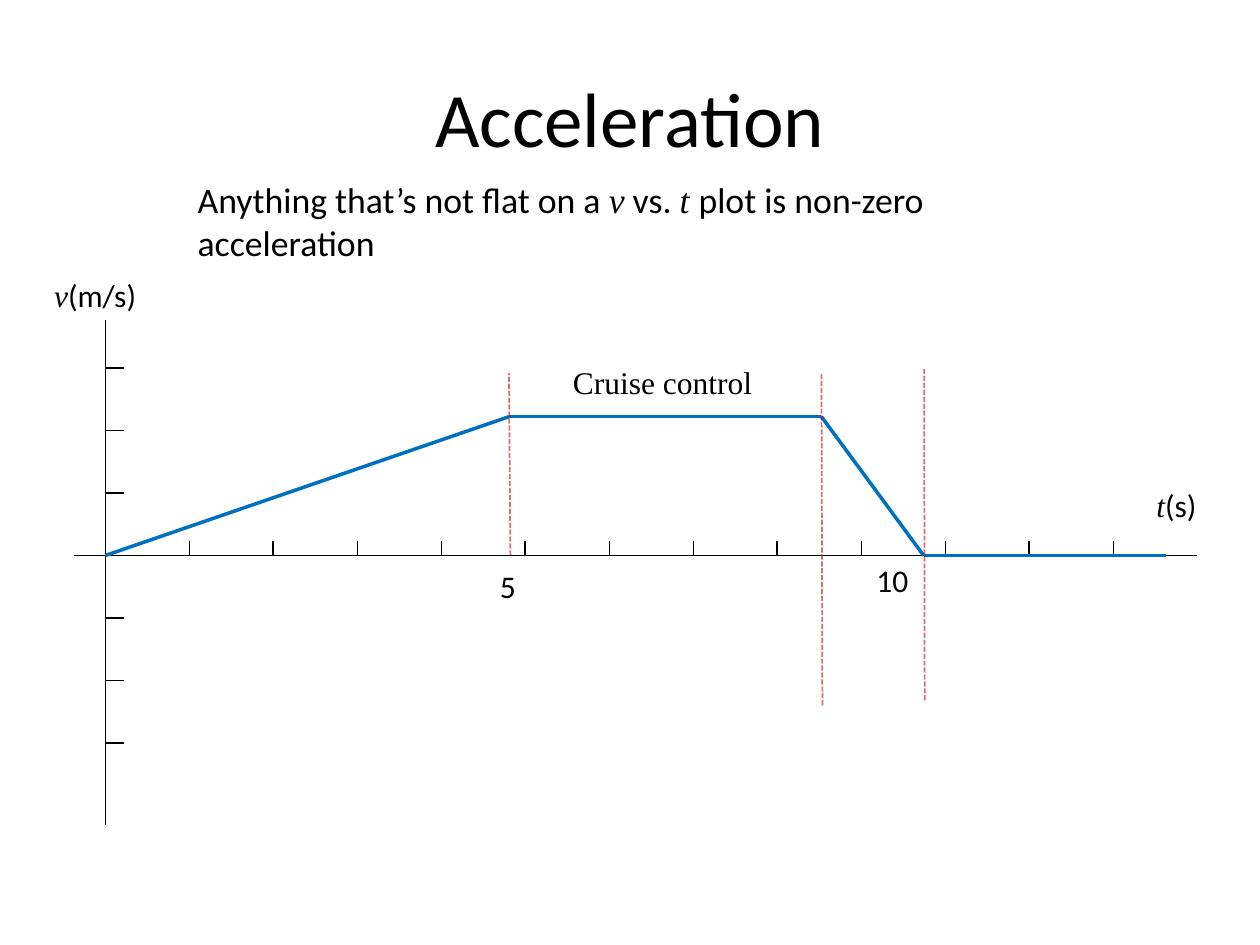
from lxml import etree
from pptx import Presentation
from pptx import util as u
from pptx.dml.color import RGBColor
from pptx.enum import dml, shapes, text
from pptx.oxml.ns import qn

BLACK = RGBColor(0x00, 0x00, 0x00)
BLUE = RGBColor(0x00, 0x70, 0xC0)
RED = RGBColor(0xC0, 0x00, 0x00)
SANS, SERIF = "Calibri", "Times New Roman"


def write(p, content, size=18, font=SANS, italic=False):
    r = p.add_run()
    r.text = content
    r.font.size = u.Pt(size)
    r.font.name = font
    r.font.italic = italic
    r.font.color.rgb = BLACK


def draw_line(x1, y1, x2, y2, color=BLACK, width=0.75):
    """Add a straight line between two points given in centimetres."""
    c = s.shapes.add_connector(
        shapes.MSO_CONNECTOR.STRAIGHT, u.Cm(x1), u.Cm(y1), u.Cm(x2), u.Cm(y2))
    c.line.color.rgb = color
    c.line.width = u.Pt(width)
    etree.SubElement(c._element.spPr, qn("a:effectLst"))
    return c


prs = Presentation()
prs.slide_width, prs.slide_height = u.Cm(25.4), u.Cm(19.05)
s = prs.slides.add_slide(prs.slide_layouts[1])

# Title and statement
title, body = s.placeholders
for sp, box in ((title, (1.27, 0.76, 22.86, 3.18)), (body, (3.73, 3.45, 18.72, 1.7))):
    sp.left, sp.top, sp.width, sp.height = map(u.Cm, box)
    sp.text_frame.auto_size = text.MSO_AUTO_SIZE.NONE

p = title.text_frame.paragraphs[0]
p.alignment = text.PP_ALIGN.CENTER
write(p, "Acceleration", size=44)

p = body.text_frame.paragraphs[0]
pPr = p._p.get_or_add_pPr()
pPr.set("marL", "0")
pPr.set("indent", "0")
etree.SubElement(pPr, qn("a:buNone"))
for content, is_symbol in (("Anything that’s not flat on a ", False), ("v", True),
                           (" vs. ", False), ("t ", True),
                           ("plot is non-zero acceleration", False)):
    write(p, content, size=20.4, font=SERIF if is_symbol else SANS, italic=is_symbol)

# Axes with ticks
x0, y0 = 2.12, 11.2
x_step, y_step = 5.08 / 3, 1.26
draw_line(x0, 6.45, x0, 16.64)
draw_line(1.5, y0, 24.13, y0)
for i in range(1, 13):
    draw_line(x0 + i * x_step, y0 - 0.3, x0 + i * x_step, y0)
for i in range(-3, 4):
    draw_line(x0, y0 + i * y_step, x0 + 0.38, y0 + i * y_step)

# Velocity curve
cruise_y = 8.4
curve = [(x0, y0), (10.26, cruise_y), (16.56, cruise_y), (18.62, y0), (23.5, y0)]
for start, end in zip(curve, curve[1:]):
    draw_line(*start, *end, color=BLUE, width=2)

# Dashed boundaries between the phases
for x1, y1, x2, y2 in ((10.29, y0, 10.26, 7.52), (16.58, 14.22, 16.56, 7.52),
                       (18.64, 14.12, 18.63, 7.42)):
    c = draw_line(x1, y1, x2, y2, color=RED, width=1)
    c.line.dash_style = dml.MSO_LINE.SQUARE_DOT
    for clr in c._element.spPr.iter(qn("a:srgbClr")):
        etree.SubElement(clr, qn("a:alpha")).set("val", "56000")

# Labels: left, top, width, serif part, sans part
for left, top, width, serif, sans in ((23.06, 9.68, 1.32, "t", "(s)"),
                                      (0.84, 5.44, 2.18, "v", "(m/s)"),
                                      (9.83, 11.3, 0.84, "", "5"),
                                      (17.42, 11.18, 1.17, "", "10"),
                                      (11.3, 7.19, 4.22, "Cruise control", "")):
    tb = s.shapes.add_textbox(u.Cm(left), u.Cm(top), u.Cm(width), u.Cm(1.02))
    tf = tb.text_frame
    tf.word_wrap = False
    tf.auto_size = text.MSO_AUTO_SIZE.SHAPE_TO_FIT_TEXT
    if serif:
        write(tf.paragraphs[0], serif, font=SERIF, italic=bool(sans))
    if sans:
        write(tf.paragraphs[0], sans)

prs.save("out.pptx")
